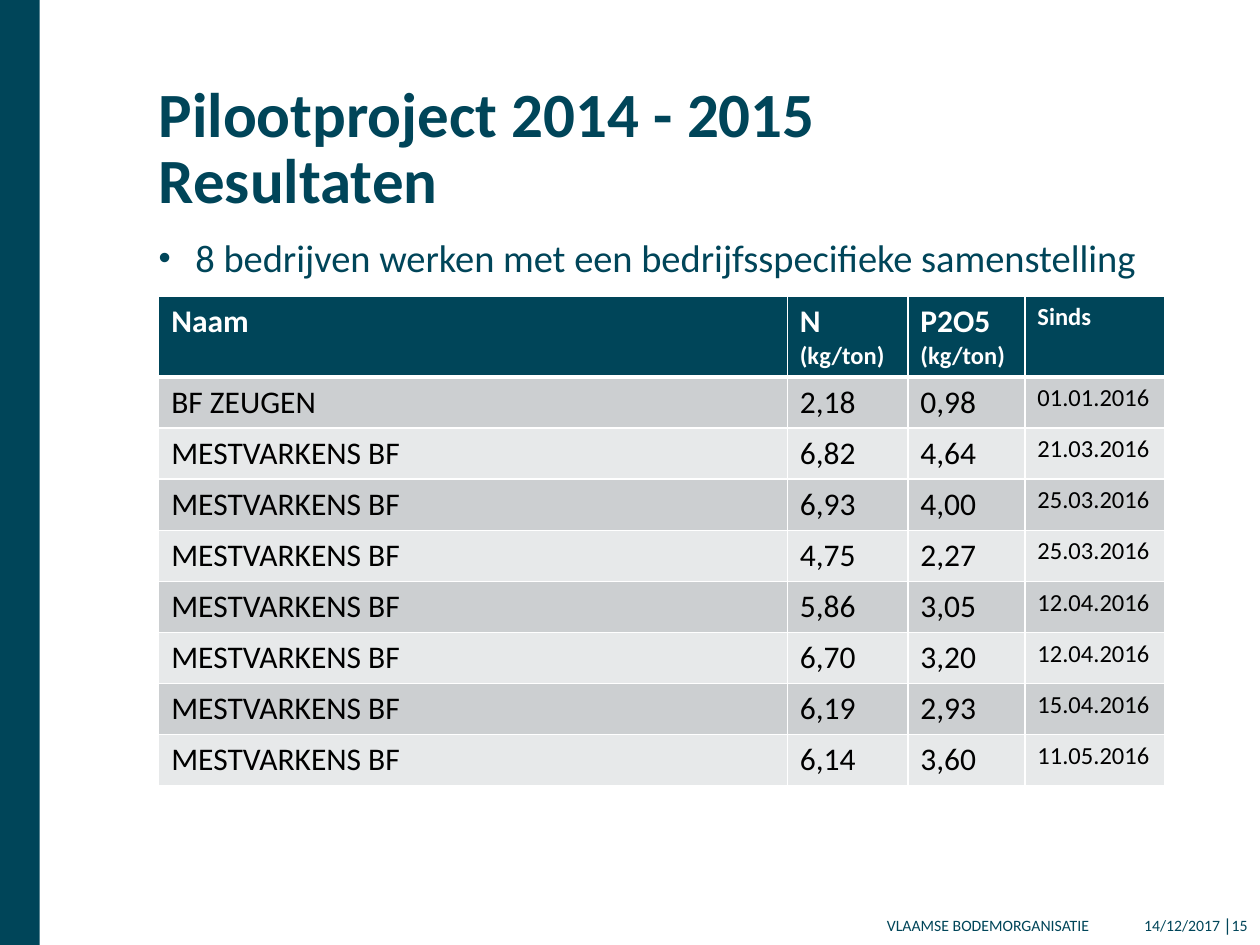
from dataclasses import dataclass

from lxml.etree import SubElement as Sub
from pptx import Presentation
from pptx.dml.color import RGBColor as Rgb
from pptx.enum.shapes import MSO_SHAPE as Kind
from pptx.enum.text import MSO_ANCHOR as Anchor, MSO_AUTO_SIZE as Auto, PP_ALIGN as Align
from pptx.oxml.ns import qn
from pptx.util import Cm, Pt


@dataclass(frozen=True)
class Theme:
    face: str = "Calibri"
    teal: str = "004559"
    white: str = "FFFFFF"
    black: str = "000000"
    bands: tuple = ("CCCFD1", "E7E9EA")
    title: int = 36
    body: int = 22
    cell: int = 18
    small: int = 14
    foot: int = 9


@dataclass(frozen=True)
class Run:
    text: str
    size: int
    bold: bool = False


@dataclass(frozen=True)
class Box:
    left: float
    top: float
    width: float
    height: float

    def cm(self) -> tuple:
        """Give the four lengths in Cm."""
        return tuple(Cm(v) for v in (self.left, self.top, self.width, self.height))


LOOK = Theme()
LEFT = 3.2
COLS = (12.67, 2.43, 2.36, 2.81)
HEAD, ROW = 1.63, 1.03
PIG = "MESTVARKENS BF"
ROWS = (
    ("BF ZEUGEN", "2,18", "0,98", "01.01.2016"),
    (PIG, "6,82", "4,64", "21.03.2016"),
    (PIG, "6,93", "4,00", "25.03.2016"),
    (PIG, "4,75", "2,27", "25.03.2016"),
    (PIG, "5,86", "3,05", "12.04.2016"),
    (PIG, "6,70", "3,20", "12.04.2016"),
    (PIG, "6,19", "2,93", "15.04.2016"),
    (PIG, "6,14", "3,60", "11.05.2016"),
)
UNIT = Run("(kg/ton)", LOOK.small, True)
TOPS = (
    (Run("Naam", LOOK.cell, True),),
    (Run("N ", LOOK.cell, True), UNIT),
    (Run("P2O5 ", LOOK.cell, True), UNIT),
    (Run("Sinds", LOOK.small, True),),
)
FEET = (
    (Box(9.07, 18.24, 13.13, 0.81), (Run("VLAAMSE BODEMORGANISATIE", LOOK.foot),)),
    (Box(22.22, 18.24, 3.18, 0.81), (
        Run("14/12/2017 ", LOOK.foot), Run("│", LOOK.foot, True), Run("15", LOOK.foot))),
)
FLAT = dict(margin_left=0, margin_top=0, margin_right=0, margin_bottom=0,
            vertical_anchor=Anchor.TOP, word_wrap=True, auto_size=Auto.NONE)
LOW = dict(vertical_anchor=Anchor.MIDDLE, word_wrap=True)


def apply(item, form: dict) -> None:
    """Set each format value on the item."""
    for key, value in form.items():
        setattr(item, key, value)


def write(para, runs: tuple, tint: str) -> None:
    """Write styled runs into a paragraph."""
    for part in runs:
        for i, line in enumerate(part.text.split("\n")):
            if i:
                para.add_line_break()
            run = para.add_run()
            run.text = line
            apply(run.font, dict(name=LOOK.face, size=Pt(part.size), bold=part.bold))
            run.font.color.rgb = Rgb.from_string(tint)


def add_text(slide, box: Box, runs: tuple, frame: dict, form: dict):
    """Add a text box and return its paragraph."""
    text = slide.shapes.add_textbox(*box.cm()).text_frame
    apply(text, frame)
    para = text.paragraphs[0]
    apply(para, form)
    write(para, runs, LOOK.teal)
    return para


def add_bullet(para) -> None:
    """Give the paragraph a hanging round bullet."""
    props = para._p.get_or_add_pPr()
    for key, value in dict(marL=Cm(0.74), indent=-Cm(0.74)).items():
        props.set(key, str(int(value)))
    Sub(Sub(props, qn("a:buClr")), qn("a:srgbClr"), val=LOOK.teal)
    Sub(props, qn("a:buSzPct"), val="90000")
    Sub(props, qn("a:buFont"), typeface="Arial")
    Sub(props, qn("a:buChar"), char="•")


def fill_cell(cell, runs: tuple, tint: str, back: str, edges: dict) -> None:
    """Draw one cell with its borders, fill and text."""
    props = cell._tc.get_or_add_tcPr()
    for side, width in edges.items():
        line = Sub(props, qn(f"a:ln{side}"), w=str(int(Pt(width))))
        Sub(Sub(line, qn("a:solidFill")), qn("a:srgbClr"), val=LOOK.white)
    cell.fill.solid()
    cell.fill.fore_color.rgb = Rgb.from_string(back)
    write(cell.text_frame.paragraphs[0], runs, tint)


def add_grid(slide) -> None:
    """Add the table of results."""
    box = Box(LEFT, 5.97, sum(COLS), HEAD + ROW * len(ROWS))
    grid = slide.shapes.add_table(len(ROWS) + 1, len(COLS), *box.cm()).table
    for col, width in zip(grid.columns, COLS):
        col.width = Cm(width)
    for i, row in enumerate(grid.rows):
        row.height = Cm(ROW if i else HEAD)
    for j, runs in enumerate(TOPS):
        fill_cell(grid.cell(0, j), runs, LOOK.white, LOOK.teal, dict(L=1, R=1, T=1, B=3))
    for i, row in enumerate(ROWS):
        edges = dict(L=1, R=1, T=1 if i else 3, B=1)
        for j, text in enumerate(row):
            size = LOOK.small if j == len(COLS) - 1 else LOOK.cell
            fill_cell(grid.cell(i + 1, j), (Run(text, size),), LOOK.black,
                      LOOK.bands[i % 2], edges)


def add_title(slide) -> None:
    """Place and format the title."""
    title = slide.shapes.title
    spot = Box(LEFT, 1.68, 21.41, 3.1).cm()
    apply(title, dict(zip(("left", "top", "width", "height"), spot)))
    apply(title.text_frame, FLAT)
    para = title.text_frame.paragraphs[0]
    apply(para, dict(alignment=Align.LEFT, line_spacing=Pt(38)))
    write(para, (Run("Pilootproject 2014 - 2015\nResultaten", LOOK.title, True),), LOOK.teal)


def add_bar(slide) -> None:
    """Add the band along the left edge."""
    bar = slide.shapes.add_shape(Kind.RECTANGLE, *Box(0, 0, 0.8, 19.05).cm())
    bar.shadow.inherit = False
    bar.fill.solid()
    bar.fill.fore_color.rgb = Rgb.from_string(LOOK.teal)
    bar.line.fill.background()


def main() -> None:
    """Build and save the slide."""
    deck = Presentation()
    apply(deck, dict(slide_width=Cm(25.4), slide_height=Cm(19.05)))
    slide = deck.slides.add_slide(deck.slide_layouts[5])
    add_bar(slide)
    add_title(slide)
    lead = Run("8 bedrijven werken met een bedrijfsspecifieke samenstelling", LOOK.body)
    add_bullet(add_text(slide, Box(LEFT, 4.83, 21.41, 1.1), (lead,), FLAT,
                        dict(line_spacing=0.9)))
    for box, runs in FEET:
        add_text(slide, box, runs, LOW, dict(alignment=Align.RIGHT))
    add_grid(slide)
    deck.save("out.pptx")


if __name__ == "__main__":
    main()
